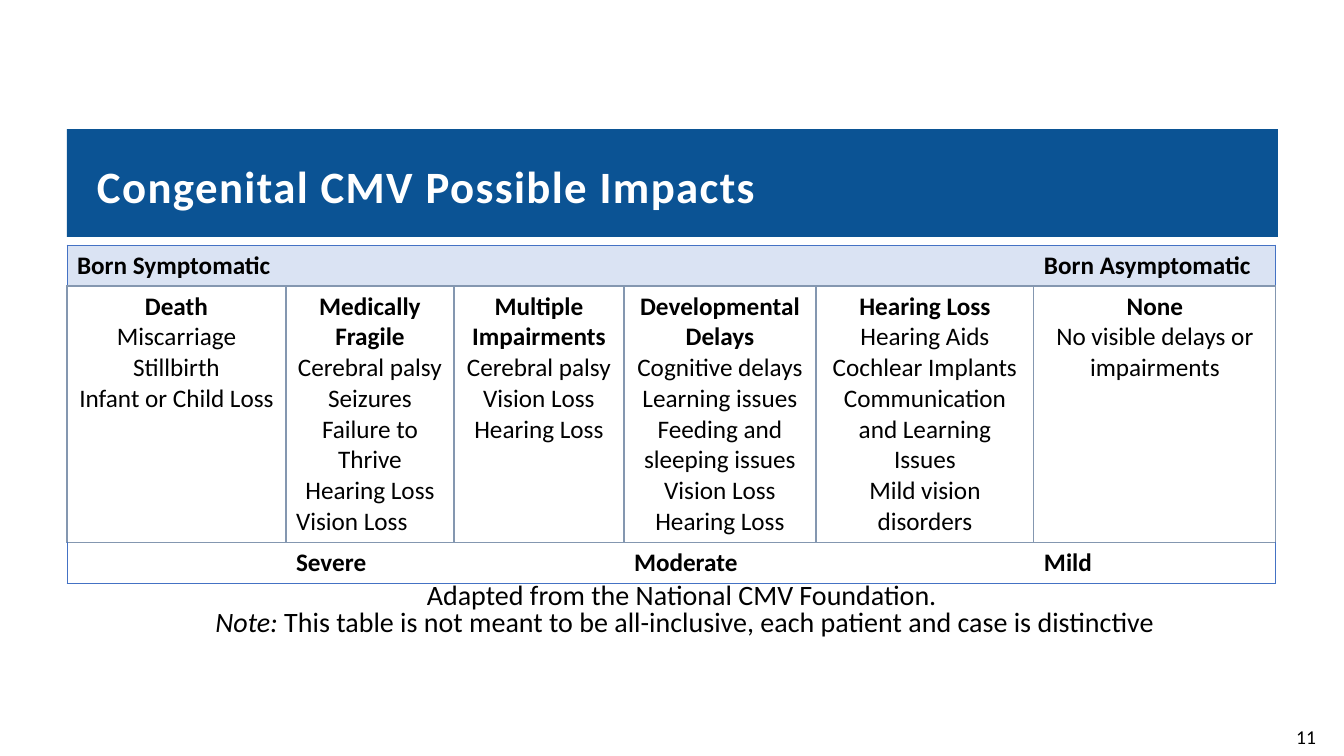
from pptx import Presentation
from pptx.dml.color import RGBColor
from pptx.enum.shapes import MSO_SHAPE
from pptx.enum.text import MSO_ANCHOR, PP_ALIGN
from pptx.oxml.ns import qn
from pptx.util import Emu, Pt
from lxml.etree import SubElement

FONT = "Calibri"
BLACK, WHITE = "000000", "FFFFFF"
BANNER_BLUE, PALE_BLUE = "0B5394", "DAE3F3"
OUTER_EDGE, INNER_EDGE = ("4472C4", 0.75), ("8497B0", 1)

COLUMN_WIDTHS = [219, 168, 170, 192, 218, 242]
ROW_HEIGHTS = [41, 256, 41]
BIRTH_STATUS = {0: "Born Symptomatic", 5: "Born Asymptomatic"}
SEVERITY = {1: "Severe", 3: "Moderate", 5: "Mild"}
IMPACTS = [
    ["Death", "Miscarriage", "Stillbirth", "Infant or Child Loss"],
    ["Medically Fragile", "Cerebral palsy", "Seizures", "Failure to Thrive",
     "Hearing Loss", "Vision Loss"],
    ["Multiple Impairments", "Cerebral palsy", "Vision Loss", "Hearing Loss"],
    ["Developmental Delays", "Cognitive delays", "Learning issues",
     "Feeding and sleeping issues", "Vision Loss", "Hearing Loss"],
    ["Hearing Loss", "Hearing Aids", "Cochlear Implants",
     "Communication and Learning Issues", "Mild vision disorders"],
    ["None", "No visible delays or impairments"],
]


def px(length):
    return Emu(round(length * 914400 / 100.8))


def rgb(hex_code):
    return RGBColor.from_string(hex_code)


def add_text(paragraph, text, size=18, color=BLACK, bold=False, italic=False,
             align=PP_ALIGN.LEFT, tracking=None):
    paragraph.alignment = align
    run = paragraph.add_run()
    run.text = text
    run.font.name = FONT
    run.font.size = Pt(size)
    run.font.bold = bold
    run.font.italic = italic
    run.font.color.rgb = rgb(color)
    if tracking:
        run.font._element.set("spc", str(tracking * 100))


def add_box(slide, left, top, width, height, insets=(10, 5, 10, 5),
            fill=None, line=None, anchor=MSO_ANCHOR.TOP):
    """Add a rectangle and return its text frame."""
    box = slide.shapes.add_shape(MSO_SHAPE.RECTANGLE, px(left), px(top), px(width), px(height))
    box.shadow.inherit = False
    for part, color in ((box.fill, fill), (box.line.fill, line)):
        if color:
            part.solid()
            part.fore_color.rgb = rgb(color)
        else:
            part.background()
    frame = box.text_frame
    frame.word_wrap = True
    frame.vertical_anchor = anchor
    (frame.margin_left, frame.margin_top,
     frame.margin_right, frame.margin_bottom) = map(px, insets)
    return frame


def set_borders(cell, left, right, top, bottom):
    properties = cell._tc.get_or_add_tcPr()
    for side, edge in zip("LRTB", (left, right, top, bottom)):
        border = SubElement(properties, qn(f"a:ln{side}"))
        if edge:
            color, width = edge
            border.set("w", str(Pt(width)))
            solid = SubElement(border, qn("a:solidFill"))
            SubElement(solid, qn("a:srgbClr")).set("val", color)
        else:
            border.set("w", "0")
            SubElement(border, qn("a:noFill"))


def style_cell(cell, row, column):
    # The middle row is a full grid; the bands above and below are open inside
    last = len(COLUMN_WIDTHS) - 1
    if row == 1:
        set_borders(cell, *[INNER_EDGE] * 4)
    else:
        set_borders(cell,
                    OUTER_EDGE if column == 0 else None,
                    OUTER_EDGE if column == last else None,
                    OUTER_EDGE if row == 0 else INNER_EDGE,
                    OUTER_EDGE if row == 2 else INNER_EDGE)
    if row == 0:
        cell.fill.solid()
        cell.fill.fore_color.rgb = rgb(PALE_BLUE)
    else:
        cell.fill.background()


def add_impact_table(slide, left, top):
    table = slide.shapes.add_table(
        len(ROW_HEIGHTS), len(COLUMN_WIDTHS), px(left), px(top),
        px(sum(COLUMN_WIDTHS)), px(sum(ROW_HEIGHTS))).table
    table.first_row = table.horz_banding = False
    for column, width in enumerate(COLUMN_WIDTHS):
        table.columns[column].width = px(width)
    for row, height in enumerate(ROW_HEIGHTS):
        table.rows[row].height = px(height)
        for column in range(len(COLUMN_WIDTHS)):
            style_cell(table.cell(row, column), row, column)

    # Birth status above, severity below
    for row, labels in ((0, BIRTH_STATUS), (2, SEVERITY)):
        for column, label in labels.items():
            add_text(table.cell(row, column).text_frame.paragraphs[0], label, bold=True)

    # One list of impacts per column, headed in bold
    for column, impacts in enumerate(IMPACTS):
        frame = table.cell(1, column).text_frame
        for index, impact in enumerate(impacts):
            paragraph = frame.paragraphs[0] if index == 0 else frame.add_paragraph()
            left_aligned = column == 1 and index == len(impacts) - 1
            add_text(paragraph, impact, bold=index == 0,
                     align=PP_ALIGN.LEFT if left_aligned else PP_ALIGN.CENTER)


def add_source_note(slide):
    frame = add_box(slide, 67, 579, 1211, 65, insets=(30, 5, 5, 5))
    note = frame.paragraphs[0]
    note.line_spacing = 0.8
    note.space_before = note.space_after = Pt(4)
    add_text(note, "Adapted from the National CMV Foundation. ", size=20, align=PP_ALIGN.CENTER)
    note.add_line_break()
    add_text(note, "Note:", size=20, italic=True, align=PP_ALIGN.CENTER)
    add_text(note, " This table is not meant to be all-inclusive, each patient and case is distinctive",
             size=20, align=PP_ALIGN.CENTER)


def main():
    deck = Presentation()
    deck.slide_width, deck.slide_height = px(1344), px(756)
    slide = deck.slides.add_slide(deck.slide_layouts[6])

    # Page number
    page_number = add_box(slide, 1273, 720, 66, 34, line=WHITE)
    add_text(page_number.paragraphs[0], "11", size=14, align=PP_ALIGN.CENTER)

    # Title banner
    title = add_box(slide, 67, 129, 1211, 108, insets=(30, 20, 30, 5),
                    fill=BANNER_BLUE, anchor=MSO_ANCHOR.MIDDLE)
    title.paragraphs[0].line_spacing = 0.8
    add_text(title.paragraphs[0], "Congenital CMV Possible Impacts",
             size=32, color=WHITE, bold=True, tracking=1)

    # Impacts and their source
    add_impact_table(slide, 67, 245)
    add_source_note(slide)

    deck.save("out.pptx")


if __name__ == "__main__":
    main()
